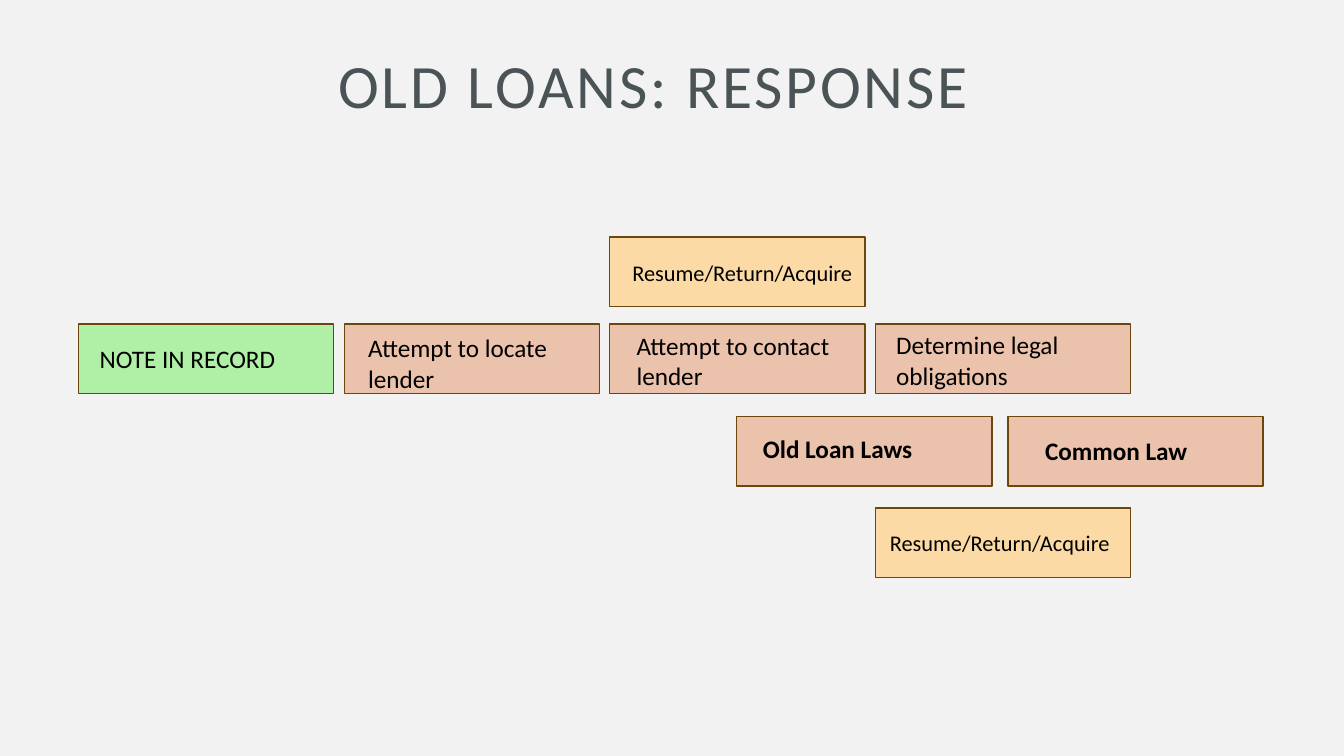
from dataclasses import dataclass

from pptx import Presentation
from pptx.dml.color import RGBColor
from pptx.enum.shapes import MSO_SHAPE
from pptx.enum.text import MSO_ANCHOR, MSO_AUTO_SIZE, PP_ALIGN
from pptx.util import Pt

RECT = MSO_SHAPE.RECTANGLE
MIDDLE = MSO_ANCHOR.MIDDLE
CENTER = PP_ALIGN.CENTER
FIXED = MSO_AUTO_SIZE.NONE
GROW = MSO_AUTO_SIZE.SHAPE_TO_FIT_TEXT


@dataclass(frozen=True)
class Theme:
    face: str = "Calibri"
    back: str = "F2F2F2"
    head: str = "4A5356"
    ink: str = "000000"
    edge: str = "6C470D"
    note: str = "AFF0A6"
    step: str = "EBC2AB"
    close: str = "FBDAA5"
    big: int = 44
    mid: int = 18
    small: int = 16


THEME = Theme()
WIDE, HIGH = 182.2, 49.7
TOP, MAIN, LAW, END = 169.2, 231.5, 297.4, 362.9
COLS = [56.2 + 189.7 * i for i in range(4)]

STEPS = [
    ("NOTE IN RECORD", COLS[0], MAIN, THEME.note, THEME.mid, False, (7.9, 10.5, 192)),
    ("Attempt to locate lender", COLS[1], MAIN, THEME.step, THEME.mid, False, (10, 2.6, 163.4)),
    ("Attempt to contact lender", COLS[2], MAIN, THEME.step, THEME.mid, False, (12, 1, 192)),
    ("Determine legal obligations", COLS[3], MAIN, THEME.step, THEME.mid, False, (7.7, 0.4, 192)),
    ("Old Loan Laws", 526.3, LAW, THEME.step, THEME.mid, True, (11.5, 8.6, 192)),
    ("Common Law", 720, LAW, THEME.step, THEME.mid, True, (19.4, 10, 144)),
    ("Resume/Return/Acquire", COLS[2], TOP, THEME.close, THEME.small, False, (9, 12.2, 182)),
    ("Resume/Return/Acquire", COLS[3], END, THEME.close, THEME.small, False, (3.2, 11.5, 182)),
]


def format_all(item, values):
    for name, value in values.items():
        setattr(item, name, value)


def style(font, size, color, bold=False):
    format_all(font, {"name": THEME.face, "size": Pt(size), "bold": bold})
    font.color.rgb = RGBColor.from_string(color)


def add_title(slide, box, text):
    title = slide.shapes.title
    format_all(title, dict(zip(("left", "top", "width", "height"), map(Pt, box))))
    frame = title.text_frame
    format_all(frame, {
        "text": text, "word_wrap": True, "auto_size": FIXED,
        "vertical_anchor": MIDDLE, "margin_left": Pt(14.4),
        "margin_right": Pt(14.4), "margin_top": 0, "margin_bottom": 0,
    })
    para = frame.paragraphs[0]
    format_all(para, {"alignment": CENTER, "line_spacing": 0.9})
    run = para.runs[0]
    style(run.font, THEME.big, THEME.head)
    run.font._element.set("spc", "200")


def add_step(slide, box, text, fill, size, bold, inset):
    left, top, wide, high = box
    card = slide.shapes.add_shape(RECT, *map(Pt, box))
    card.shadow.inherit = False
    card.fill.solid()
    card.fill.fore_color.rgb = RGBColor.from_string(fill)
    card.line.color.rgb = RGBColor.from_string(THEME.edge)
    card.line.width = Pt(1)
    across, down, span = inset
    tall = 29 if size * len(text) < 400 else 51
    label = slide.shapes.add_textbox(Pt(left + across), Pt(top + down), Pt(span), Pt(tall))
    frame = label.text_frame
    format_all(frame, {"text": text, "word_wrap": True, "auto_size": GROW})
    style(frame.paragraphs[0].runs[0].font, size, THEME.ink, bold)


def add_flow(slide, box):
    left, top = box
    for text, across, down, *look in STEPS:
        add_step(slide, (left + across, top + down, WIDE, HIGH), text, *look)


def main():
    deck = Presentation()
    format_all(deck, {"slide_width": Pt(960), "slide_height": Pt(540)})
    slide = deck.slides.add_slide(deck.slide_layouts[5])
    slide.background.fill.solid()
    slide.background.fill.fore_color.rgb = RGBColor.from_string(THEME.back)
    add_title(slide, (185, 25.2, 563.8, 76.3), "OLD LOANS: RESPONSE")
    add_flow(slide, (0, 0))
    deck.save("out.pptx")


if __name__ == "__main__":
    main()
